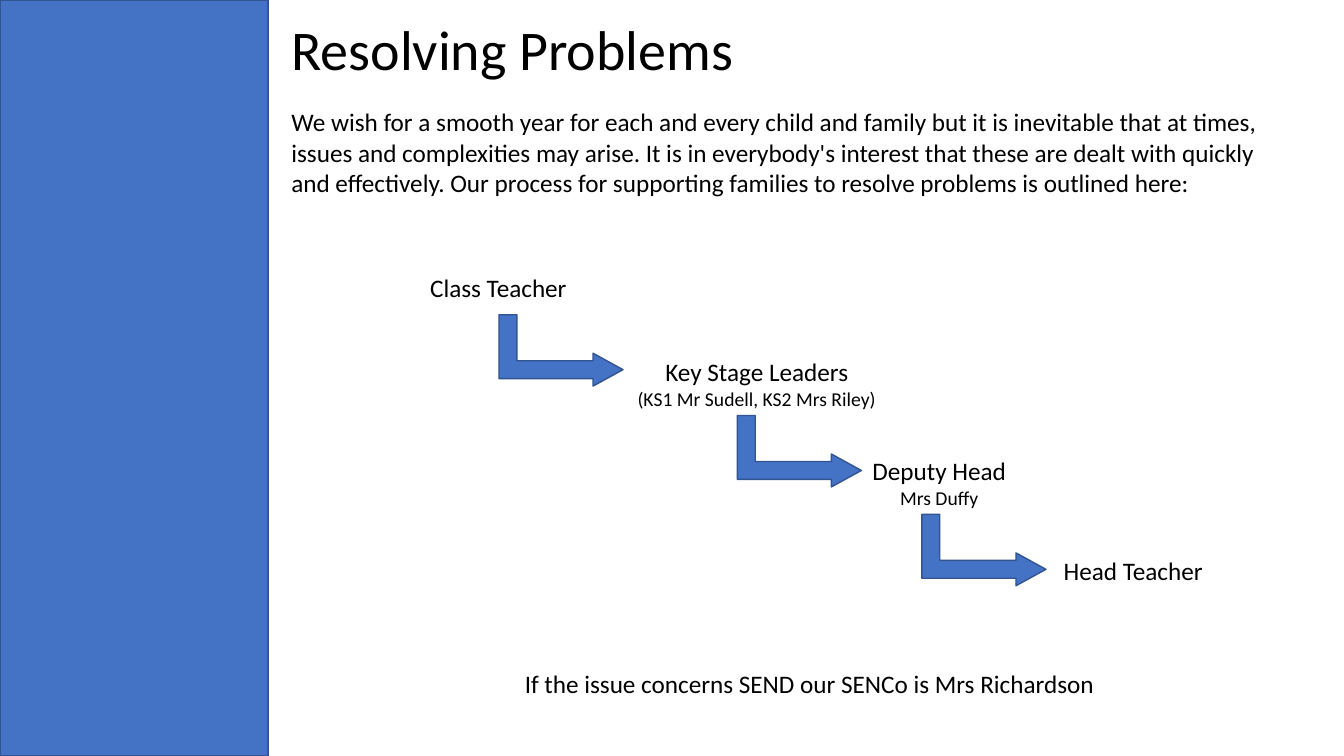
"""Build the slide on how families can resolve problems with the school."""
import pptx
import pptx.dml.color
import pptx.enum.shapes
import pptx.enum.text
import pptx.util

Pt = pptx.util.Pt
BLUE = pptx.dml.color.RGBColor(0x44, 0x72, 0xC4)
DARK_BLUE = pptx.dml.color.RGBColor(0x32, 0x54, 0x91)
BLACK = pptx.dml.color.RGBColor(0, 0, 0)
LEFT = pptx.enum.text.PP_ALIGN.LEFT
CENTER = pptx.enum.text.PP_ALIGN.CENTER
SHAPES = pptx.enum.shapes.MSO_SHAPE


class SlideBuilder:
    """Hold the style and the current slide."""

    font = "Calibri"

    def __init__(self, deck):
        self.slide = deck.slides.add_slide(deck.slide_layouts[5])

    def place(self, item, left, top, width, height):
        item.left, item.top = Pt(left), Pt(top)
        item.width, item.height = Pt(width), Pt(height)

    def fill_text(self, item, lines, sizes, align, wrap=True):
        frame = item.text_frame
        frame.text = "\n".join(lines)
        frame.word_wrap = wrap
        frame.auto_size = pptx.enum.text.MSO_AUTO_SIZE.NONE
        frame.vertical_anchor = pptx.enum.text.MSO_ANCHOR.TOP
        for para, size in zip(frame.paragraphs, sizes):
            para.alignment = align
            for span in para.runs:
                span.font.name = self.font
                span.font.size = Pt(size)
                span.font.color.rgb = BLACK

    def title(self, text, bounds):
        title = self.slide.shapes.title
        self.place(title, *bounds)
        self.fill_text(title, [text], [40], LEFT, wrap=False)

    def text(self, lines, bounds, align=LEFT, wrap=True):
        box = self.slide.shapes.add_textbox(*map(Pt, bounds))
        self.fill_text(box, lines, [18, 14], align, wrap)

    def shape(self, kind, bounds):
        shape = self.slide.shapes.add_shape(kind, *map(Pt, bounds))
        shape.shadow.inherit = False
        shape.fill.solid()
        shape.fill.fore_color.rgb = BLUE
        shape.line.color.rgb = DARK_BLUE
        shape.line.width = Pt(1)
        return shape

    def step_arrow(self, left, top):
        arrow = self.shape(SHAPES.BENT_UP_ARROW, (left, top, 51, 88.6))
        arrow.rotation = 90
        for index, value in enumerate((0.25, 0.23, 0.42)):
            arrow.adjustments[index] = value


deck = pptx.Presentation()
deck.slide_width, deck.slide_height = Pt(960), Pt(540)
page = SlideBuilder(deck)

page.shape(SHAPES.RECTANGLE, (0, 0, 191.5, 540))
page.title("Resolving Problems", (201, 6.5, 333.5, 55.5))
page.text(
    ["We wish for a smooth year for each and every child and family but it is "
     "inevitable that at times, issues and complexities may arise. It is in "
     "everybody's interest that these are dealt with quickly and effectively. "
     "Our process for supporting families to resolve problems is outlined here:"],
    (201, 72.7, 706.3, 72.7))

steps = [
    (["Class Teacher"], (294.5, 190.8, 123, 29)),
    (["Key Stage Leaders", "(KS1 Mr Sudell, KS2 Mrs\u00a0Riley)"], (435.6, 251.3, 210, 46)),
    (["Deputy Head", "Mrs Duffy"], (595.4, 322, 151, 46)),
    (["Head Teacher"], (725, 393, 169, 29)),
]
for lines, bounds in steps:
    page.text(lines, bounds, CENTER)

for left, top in [(375.2, 206), (545.5, 278), (677.3, 348.6)]:
    page.step_arrow(left, top)

page.text(["If the issue concerns SEND our SENCo is Mrs Richardson"],
          (367.8, 474, 426, 29), wrap=False)

deck.save("out.pptx")
